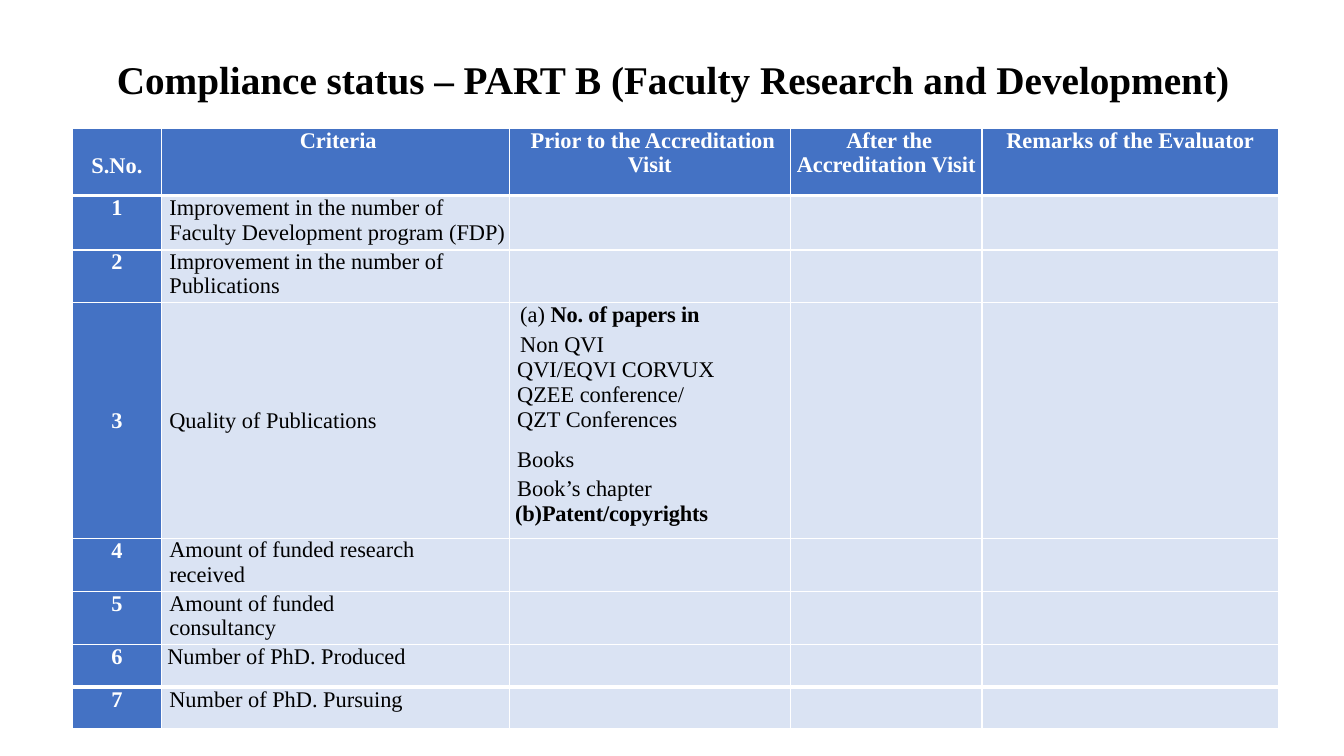
import pptx
import pptx.util
import pptx.dml.color
import pptx.enum.text
import pptx.oxml.ns
from lxml import etree

Inches, Pt = pptx.util.Inches, pptx.util.Pt
ALIGN, ANCHOR = pptx.enum.text.PP_ALIGN, pptx.enum.text.MSO_ANCHOR
FONT = "Times New Roman"
COLORS = {"header": "4472C4", "body": "DAE3F3", "rule": "FFFFFF",
          "light": "FFFFFF", "dark": "000000"}

COLUMN_WIDTHS = [0.88, 3.45, 2.79, 1.9, 2.94]
ROW_HEIGHTS = [0.67, 0.54, 0.52, 1.9, 0.49, 0.48, 0.42, 0.41]
# Heading, first-line indent
HEADINGS = [("S.No.", 0), ("Criteria", 0.06),
            ("Prior to the Accreditation Visit", 0.06),
            ("After the Accreditation Visit", 0.06),
            ("Remarks of the Evaluator", 0)]
# Criterion, left margin, right cell margin, line spacing
CRITERIA = [
    ("Improvement in the number of Faculty Development program (FDP)", 0.08, 0, 1.0),
    ("Improvement in the number of Publications", 0.08, 0, 0.98),
    ("Quality of Publications", 0.08, 0, 1.0),
    ("Amount of funded research received", 0.08, 0.5, 0.98),
    ("Amount of funded consultancy", 0.08, 1.0, 1.0),
    ("Number of PhD. Produced", 0.06, 0, 1.0),
    ("Number of PhD. Pursuing", 0.08, 0, 1.0),
]
QUALITY_ROW = 3
# Plain text, bold text, left margin, space before (pt), line spacing
PUBLICATION_KINDS = [
    ("(a) ", "No. of papers in", 0.11, 0, 1.0),
    ("Non QVI", "", 0.11, 3.3, 1.0),
    ("QVI/EQVI CORVUX", "", 0.08, 0.1, 1.0),
    ("QZEE conference/", "", 0.08, 0.1, 1.0),
    ("QZT Conferences", "", 0.08, 0.1, 1.0),
    ("Books", "", 0.08, 18.5, Pt(10.2)),
    ("Book’s chapter", "", 0.08, 10.2, Pt(10.8)),
    ("", "(b)Patent/copyrights", 0.06, 0, 1.0),
]


def rgb(name):
    return pptx.dml.color.RGBColor.from_string(COLORS[name])


def style(paragraph, size, color, bold=None, margin=0, indent=0):
    paragraph.font.name = FONT
    paragraph.font.size = Pt(size)
    paragraph.font.color.rgb = rgb(color)
    paragraph.font.bold = bold
    properties = paragraph._p.get_or_add_pPr()
    properties.set("marL", str(Inches(margin)))
    properties.set("indent", str(Inches(indent)))


def set_borders(cell, top, bottom):
    """Rule the cell in white, with widths in points above and below."""
    properties = cell._tc.get_or_add_tcPr()
    widths = {"lnL": 1, "lnR": 1, "lnT": top, "lnB": bottom}
    for position, (side, width) in enumerate(widths.items()):
        line = etree.Element(pptx.oxml.ns.qn(f"a:{side}"), w=str(Pt(width)))
        fill = etree.SubElement(line, pptx.oxml.ns.qn("a:solidFill"))
        etree.SubElement(fill, pptx.oxml.ns.qn("a:srgbClr"), val=COLORS["rule"])
        properties.insert(position, line)


def write_cell(cell, text, color, bold, align, margin=0, indent=0):
    paragraph = cell.text_frame.paragraphs[0]
    paragraph.text = text
    paragraph.alignment = align
    style(paragraph, 16, color, bold, margin, indent)
    return paragraph


def write_publication_kinds(cell):
    frame = cell.text_frame
    for index, (plain, strong, margin, before, spacing) in enumerate(PUBLICATION_KINDS):
        paragraph = frame.add_paragraph() if index else frame.paragraphs[0]
        for text, bold in ((plain, False), (strong, True)):
            if text:
                run = paragraph.add_run()
                run.text = text
                run.font.bold = bold
                if bold:
                    run._r.get_or_add_rPr().set("spc", "-10")
        style(paragraph, 16, "dark", margin=margin)
        paragraph.space_before = Pt(before)
        paragraph.line_spacing = spacing


def add_title(slide, left, top, width, height):
    frame = slide.shapes.add_textbox(Inches(left), Inches(top),
                                     Inches(width), Inches(height)).text_frame
    frame.word_wrap = True
    frame.vertical_anchor = ANCHOR.MIDDLE
    title = frame.paragraphs[0]
    title.text = "Compliance status – PART B (Faculty Research and Development)"
    title.line_spacing = 0.9
    style(title, 28, "dark", True, margin=0.07)


def add_compliance_table(slide, left, top):
    table = slide.shapes.add_table(
        len(ROW_HEIGHTS), len(COLUMN_WIDTHS), Inches(left), Inches(top),
        Inches(sum(COLUMN_WIDTHS)), Inches(sum(ROW_HEIGHTS))).table
    table.horz_banding = False
    for column, width in zip(table.columns, COLUMN_WIDTHS):
        column.width = Inches(width)

    last = len(ROW_HEIGHTS) - 1
    for r, height in enumerate(ROW_HEIGHTS):
        table.rows[r].height = Inches(height)
        for c in range(len(COLUMN_WIDTHS)):
            cell = table.cell(r, c)
            cell.margin_left = cell.margin_right = 0
            cell.margin_top = cell.margin_bottom = 0
            cell.fill.solid()
            cell.fill.fore_color.rgb = rgb("header" if r == 0 or c == 0 else "body")
            set_borders(cell, top=3 if r in (1, last) else 1,
                        bottom=3 if r in (0, last - 1) else 1)
            cell.text_frame.paragraphs[0].font.size = Pt(16)

    for c, (heading, indent) in enumerate(HEADINGS):
        write_cell(table.cell(0, c), heading, "light", True, ALIGN.CENTER, indent=indent)
    table.cell(0, 0).margin_top = Inches(0.25)

    for r, (criterion, margin, right, spacing) in enumerate(CRITERIA, start=1):
        number, name = table.cell(r, 0), table.cell(r, 1)
        write_cell(number, str(r), "light", True, ALIGN.CENTER)
        paragraph = write_cell(name, criterion, "dark", False, ALIGN.LEFT, margin)
        paragraph.line_spacing = spacing
        name.margin_right = Inches(right)
        if r == QUALITY_ROW:
            number.vertical_anchor = name.vertical_anchor = ANCHOR.MIDDLE

    write_publication_kinds(table.cell(QUALITY_ROW, 2))


def main():
    deck = pptx.Presentation()
    deck.slide_width, deck.slide_height = Inches(13.33), Inches(7.5)
    slide = deck.slides.add_slide(deck.slide_layouts[6])
    add_title(slide, 0.99, 0.22, 11.5, 1.19)
    add_compliance_table(slide, 0.72, 1.27)
    deck.save("out.pptx")


if __name__ == "__main__":
    main()
